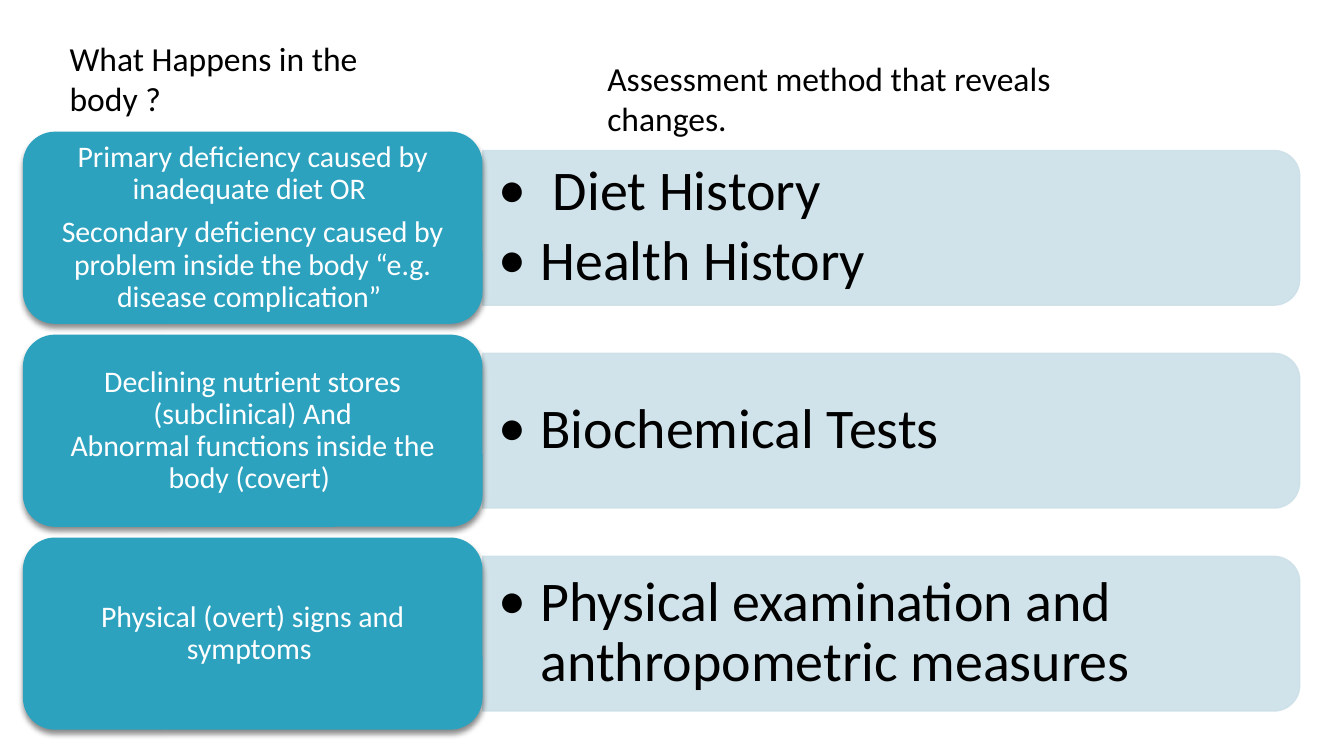
from dataclasses import dataclass

from lxml import etree
from pptx import Presentation
from pptx.dml.color import RGBColor
from pptx.enum.shapes import MSO_SHAPE
from pptx.enum.text import MSO_ANCHOR, PP_ALIGN
from pptx.oxml.ns import qn
from pptx.shapes.autoshape import Shape
from pptx.slide import Slide
from pptx.text.text import TextFrame, _Paragraph
from pptx.util import Inches, Pt

ROUND_RECT = MSO_SHAPE.ROUNDED_RECTANGLE
ROUND_TWO = MSO_SHAPE.ROUND_2_SAME_RECTANGLE
MIDDLE = MSO_ANCHOR.MIDDLE
CENTER = PP_ALIGN.CENTER


@dataclass(frozen=True)
class Theme:
    font: str = "Calibri"
    card: RGBColor = RGBColor(0x2D, 0xA2, 0xBF)
    panel: RGBColor = RGBColor(0xCD, 0xE0, 0xE8)
    light: RGBColor = RGBColor(0xFF, 0xFF, 0xFF)
    dark: RGBColor = RGBColor(0, 0, 0)
    card_size: int = 16
    heading_size: int = 18
    method_size: int = 30
    panel_alpha: int = 90
    shadow_alpha: int = 45


@dataclass(frozen=True)
class Stage:
    changes: list[str]
    methods: list[str]


@dataclass(frozen=True)
class Heading:
    text: str
    left: float
    top: float
    width: float
    height: float


THEME = Theme()
HEADINGS = [
    Heading("What Happens in the body ?", 0.42, 0.23, 2.5, 0.71),
    Heading("Assessment method that reveals changes.", 4.42, 0.38, 4.25, 0.4),
]
STAGES = [
    Stage(["Primary deficiency caused by inadequate diet OR ",
           "Secondary deficiency caused by problem inside the body “e.g. disease complication” "],
          [" Diet History", "Health History"]),
    Stage(["Declining nutrient stores (subclinical) And\n"
           "Abnormal functions inside the body (covert) "],
          ["Biochemical Tests"]),
    Stage(["Physical (overt) signs and symptoms "],
          ["Physical examination and anthropometric measures"]),
]

CARD_LEFT, CARD_TOP, CARD_W, CARD_H = 0.17, 0.98, 3.42, 1.43
CARD_GAP = 0.08
ROW_PITCH = CARD_H + CARD_GAP
PANEL_LEFT, PANEL_W, PANEL_H = CARD_LEFT + CARD_W, 6.08, 1.15
METHOD_W, METHOD_H = 6.02, 1.03


def set_alpha(color: etree._Element, percent: int) -> None:
    etree.SubElement(color, qn("a:alpha"), val=str(percent * 1000))


def add_soft_shadow(s: Shape) -> None:
    effects = s._element.spPr.find(qn("a:effectLst"))
    shadow = etree.SubElement(effects, qn("a:outerShdw"), blurRad=str(Pt(3)),
                              dist=str(Pt(2.4)), dir="5400000", rotWithShape="0")
    color = etree.SubElement(shadow, qn("a:srgbClr"), val=str(THEME.dark))
    set_alpha(color, THEME.shadow_alpha)


def add_bullet(p: _Paragraph) -> None:
    pPr = p._p.get_or_add_pPr()
    pPr.set("marL", str(Inches(0.31)))
    pPr.set("indent", str(Inches(-0.31)))
    etree.SubElement(pPr, qn("a:buFont"), typeface=THEME.font)
    etree.SubElement(pPr, qn("a:buChar"), char="•")


def set_frame(tf: TextFrame, inset_x: float, inset_y: float) -> None:
    tf.word_wrap = True
    tf.vertical_anchor = MIDDLE
    tf.margin_left = tf.margin_right = Inches(inset_x)
    tf.margin_top = tf.margin_bottom = Inches(inset_y)


def add_paragraphs(tf: TextFrame, texts: list[str], size: int, color: RGBColor) -> list[_Paragraph]:
    """Write one paragraph per text; a newline becomes a line break."""
    for i, text in enumerate(texts):
        p = tf.add_paragraph() if i else tf.paragraphs[0]
        for j, line in enumerate(text.split("\n")):
            if j:
                p.add_line_break()
            r = p.add_run()
            r.text = line
            r.font.name = THEME.font
            r.font.size = Pt(size)
            r.font.color.rgb = color
    return list(tf.paragraphs)


def add_panel(slide: Slide, middle: float) -> None:
    """Draw the bar on its end, then turn it so the round corners face right."""
    center = PANEL_LEFT + PANEL_W / 2
    s = slide.shapes.add_shape(ROUND_TWO, Inches(center - PANEL_H / 2), Inches(middle - PANEL_W / 2),
                               Inches(PANEL_H), Inches(PANEL_W))
    s.rotation = 90
    s.shadow.inherit = False
    s.fill.solid()
    s.fill.fore_color.rgb = THEME.panel
    s.line.color.rgb = THEME.panel
    s.line.width = Pt(0.79)
    for color in s._element.spPr.iter(qn("a:srgbClr")):
        set_alpha(color, THEME.panel_alpha)


def add_methods(slide: Slide, middle: float, methods: list[str]) -> None:
    s = slide.shapes.add_textbox(Inches(PANEL_LEFT), Inches(middle - METHOD_H / 2),
                                 Inches(METHOD_W), Inches(METHOD_H))
    set_frame(s.text_frame, 0.12, 0.06)
    for p in add_paragraphs(s.text_frame, methods, THEME.method_size, THEME.dark):
        p.level = 1
        p.line_spacing = 0.9
        p.space_after = Pt(5)
        add_bullet(p)


def add_card(slide: Slide, top: float, changes: list[str]) -> None:
    s = slide.shapes.add_shape(ROUND_RECT, Inches(CARD_LEFT), Inches(top),
                               Inches(CARD_W), Inches(CARD_H))
    s.fill.solid()
    s.fill.fore_color.rgb = THEME.card
    s.line.fill.background()
    s.shadow.inherit = False
    add_soft_shadow(s)
    # The preset already insets its text by the corner radius.
    set_frame(s.text_frame, 0.07, 0.03)
    for p in add_paragraphs(s.text_frame, changes, THEME.card_size, THEME.light):
        p.alignment = CENTER
        p.line_spacing = 0.9
        p.space_after = Pt(6)


def add_heading(slide: Slide, heading: Heading) -> None:
    s = slide.shapes.add_textbox(Inches(heading.left), Inches(heading.top),
                                 Inches(heading.width), Inches(heading.height))
    s.text_frame.word_wrap = True
    add_paragraphs(s.text_frame, [heading.text], THEME.heading_size, THEME.dark)


def main() -> None:
    prs = Presentation()
    prs.slide_width = Inches(10)
    prs.slide_height = Inches(10 * 9 / 16)
    slide = prs.slides.add_slide(prs.slide_layouts[6])
    for i, stage in enumerate(STAGES):
        top = CARD_TOP + i * ROW_PITCH
        middle = top + CARD_H / 2
        add_panel(slide, middle)
        add_methods(slide, middle, stage.methods)
        add_card(slide, top, stage.changes)
    for heading in HEADINGS:
        add_heading(slide, heading)
    prs.save("out.pptx")


if __name__ == "__main__":
    main()
